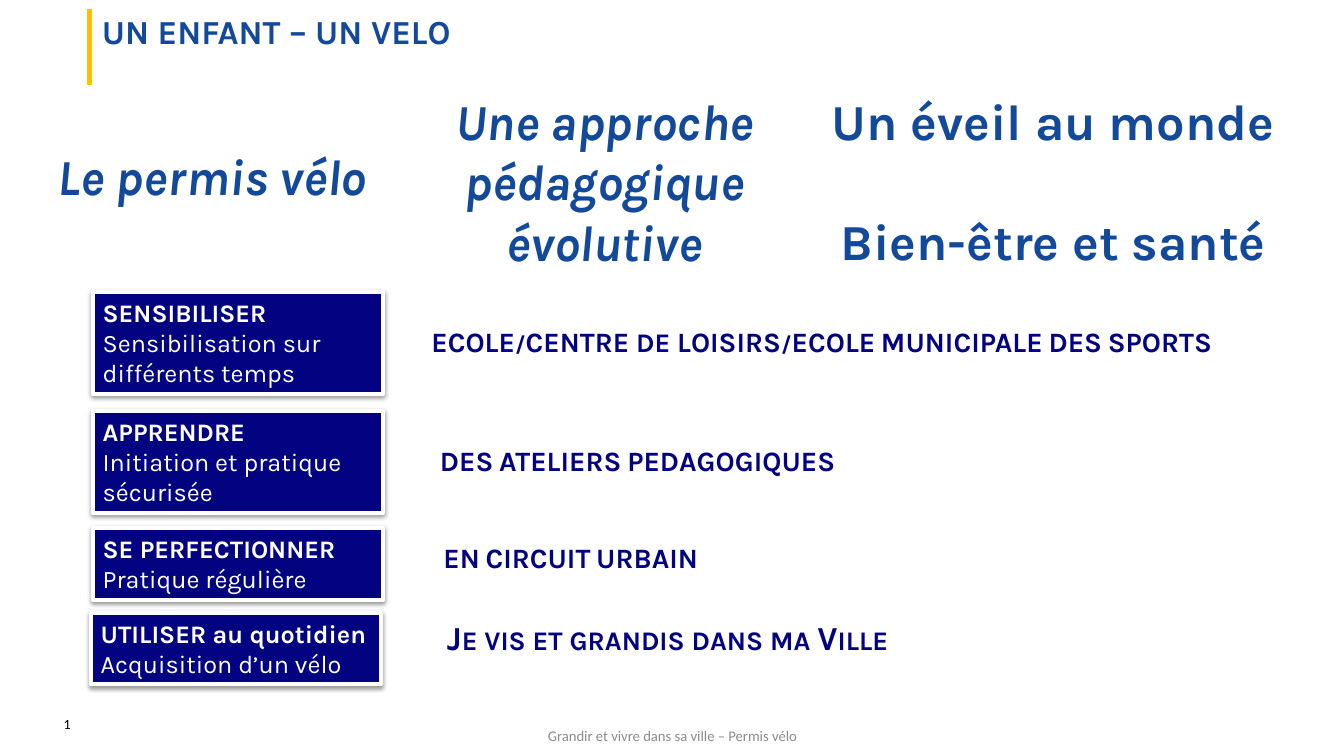
from lxml.etree import SubElement
from pptx import Presentation
from pptx.dml.color import RGBColor
from pptx.enum.shapes import MSO_CONNECTOR, MSO_SHAPE
from pptx.enum.text import MSO_ANCHOR, MSO_AUTO_SIZE, PP_ALIGN
from pptx.oxml.ns import qn
from pptx.util import Inches, Pt

COLORS = {
    "blue": "12499B",
    "navy": "030381",
    "yellow": "FFC000",
    "white": "FFFFFF",
    "black": "000000",
    "gray": "8C8C8C",
    "slate": "606060",
}
HEADINGS = [
    ((-0.19, 1.39, 4.59, 0.69), ["Le permis vélo"], True),
    ((3.7, 0.84, 4.59, 1.9), ["Une approche pédagogique évolutive"], True),
    ((8.15, 0.84, 4.59, 1.9), ["Un éveil au monde", "Bien-être et santé"], False),
]
STEPS = [
    ((0.92, 2.9, 2.88, 1.01), "SENSIBILISER", "Sensibilisation sur différents temps"),
    ((0.92, 4.08, 2.88, 1.01), "APPRENDRE", "Initiation et pratique sécurisée"),
    ((0.92, 5.24, 2.88, 0.71), "SE PERFECTIONNER", "Pratique régulière"),
    ((0.9, 6.08, 2.88, 0.71), "UTILISER au quotidien", "Acquisition d’un vélo"),
]
PLACES = [
    ((4.18, 3.11, 9, 0.5), False, [
        ("ECOLE/CENTRE", 20, "navy"),
        (" ", 24, "slate"),
        ("de ", 24, "navy"),
        ("LOISIRS/ECOLE MUNICIPALE DES SPORTS", 20, "navy"),
    ]),
    ((4.21, 4.35, 4.23, 0.44), True, [("DES ATELIERS PEDAGOGIQUES", 20, "navy")]),
    ((4.22, 5.31, 2.88, 0.44), True, [("EN CIRCUIT URBAIN", 20, "navy")]),
    ((4.12, 6.07, 5, 0.5), True, [("Je vis et grandis dans ma Ville", 24, "navy")]),
]


def rgb(name):
    return RGBColor.from_string(COLORS[name])


def inches(box):
    return [Inches(length) for length in box]


def set_font(font, size, color, bold=False, italic=False, name="Karla"):
    font.name = name
    font.size = Pt(size)
    font.bold = bold
    font.italic = italic
    font.color.rgb = rgb(color)


def set_insets(frame, left, top, right, bottom):
    frame.margin_left, frame.margin_top, frame.margin_right, frame.margin_bottom = inches(
        (left, top, right, bottom))


def add_text_box(page, box, anchor=MSO_ANCHOR.TOP, wrap=True):
    frame = page.shapes.add_textbox(*inches(box)).text_frame
    frame.word_wrap = wrap
    frame.vertical_anchor = anchor
    return frame


def add_title(page, box):
    left, top, width, height = box
    title = page.shapes.title
    title.left, title.top, title.width, title.height = inches(box)
    frame = title.text_frame
    frame.auto_size = MSO_AUTO_SIZE.NONE
    frame.vertical_anchor = MSO_ANCHOR.TOP
    set_insets(frame, 0.28, 0.02, 0.04, 0)
    para = frame.paragraphs[0]
    para.text = "UN ENFANT – UN VELO"
    para.alignment = PP_ALIGN.LEFT
    set_font(para.font, 24, "blue", bold=True)
    bar = page.shapes.add_connector(
        MSO_CONNECTOR.STRAIGHT, *inches((left + 0.16, top, left + 0.16, top + height)))
    bar.line.color.rgb = rgb("yellow")
    bar.line.width = Pt(3.5)
    SubElement(bar.element.spPr, qn("a:effectLst"))


def add_heading(page, box, lines, italic):
    frame = add_text_box(page, box, MSO_ANCHOR.MIDDLE)
    set_insets(frame, 0.04, 0.04, 0.04, 0.04)
    for index, line in enumerate(lines):
        para = frame.paragraphs[0] if index == 0 else frame.add_paragraph()
        para.text = line
        para.alignment = PP_ALIGN.CENTER
        if index:
            para.space_before = Pt(43)
        set_font(para.font, 36, "blue", bold=True, italic=italic)


def add_shadow(shape):
    shape.shadow.inherit = False
    effects = shape.element.spPr.find(qn("a:effectLst"))
    shadow = SubElement(effects, qn("a:outerShdw"), blurRad="40000", dist="20000",
                        dir="5400000", rotWithShape="0")
    color = SubElement(shadow, qn("a:srgbClr"), val=COLORS["black"])
    SubElement(color, qn("a:alpha"), val="38000")


def add_step(page, box, heading, detail):
    card = page.shapes.add_shape(MSO_SHAPE.RECTANGLE, *inches(box))
    card.fill.solid()
    card.fill.fore_color.rgb = rgb("navy")
    card.line.color.rgb = rgb("white")
    card.line.width = Pt(3)
    add_shadow(card)
    frame = card.text_frame
    frame.word_wrap = True
    frame.auto_size = MSO_AUTO_SIZE.SHAPE_TO_FIT_TEXT
    frame.vertical_anchor = MSO_ANCHOR.TOP
    for para, text, bold in ((frame.paragraphs[0], heading, True),
                             (frame.add_paragraph(), detail, False)):
        para.text = text
        para.alignment = PP_ALIGN.LEFT
        set_font(para.font, 18, "white", bold=bold)


def add_place(page, box, centered, spans):
    frame = add_text_box(page, box, wrap=not centered)
    para = frame.paragraphs[0]
    para.alignment = PP_ALIGN.CENTER if centered else PP_ALIGN.LEFT
    for text, size, color in spans:
        span = para.add_run()
        span.text = text
        set_font(span.font, size, color, bold=True)
        span.font._element.set("cap", "small")


def add_footer(page, box, text, size, color, anchor):
    para = add_text_box(page, box, anchor).paragraphs[0]
    para.text = text
    para.alignment = PP_ALIGN.CENTER
    set_font(para.font, size, color, name="Calibri")


def main():
    deck = Presentation()
    deck.slide_width, deck.slide_height = Inches(13.33), Inches(7.5)
    page = deck.slides.add_slide(deck.slide_layouts.get_by_name("Title Only"))
    add_title(page, (0.73, 0.09, 11.86, 0.75))
    for heading in HEADINGS:
        add_heading(page, *heading)
    for step in STEPS:
        add_step(page, *step)
    for place in PLACES:
        add_place(page, *place)
    add_footer(page, (0.16, 7.05, 1.01, 0.4), "1", 10, "black", MSO_ANCHOR.TOP)
    add_footer(page, (4.56, 7.1, 4.22, 0.4), "Grandir et vivre dans sa ville – Permis vélo",
               10.5, "gray", MSO_ANCHOR.MIDDLE)
    deck.save("out.pptx")


if __name__ == "__main__":
    main()
